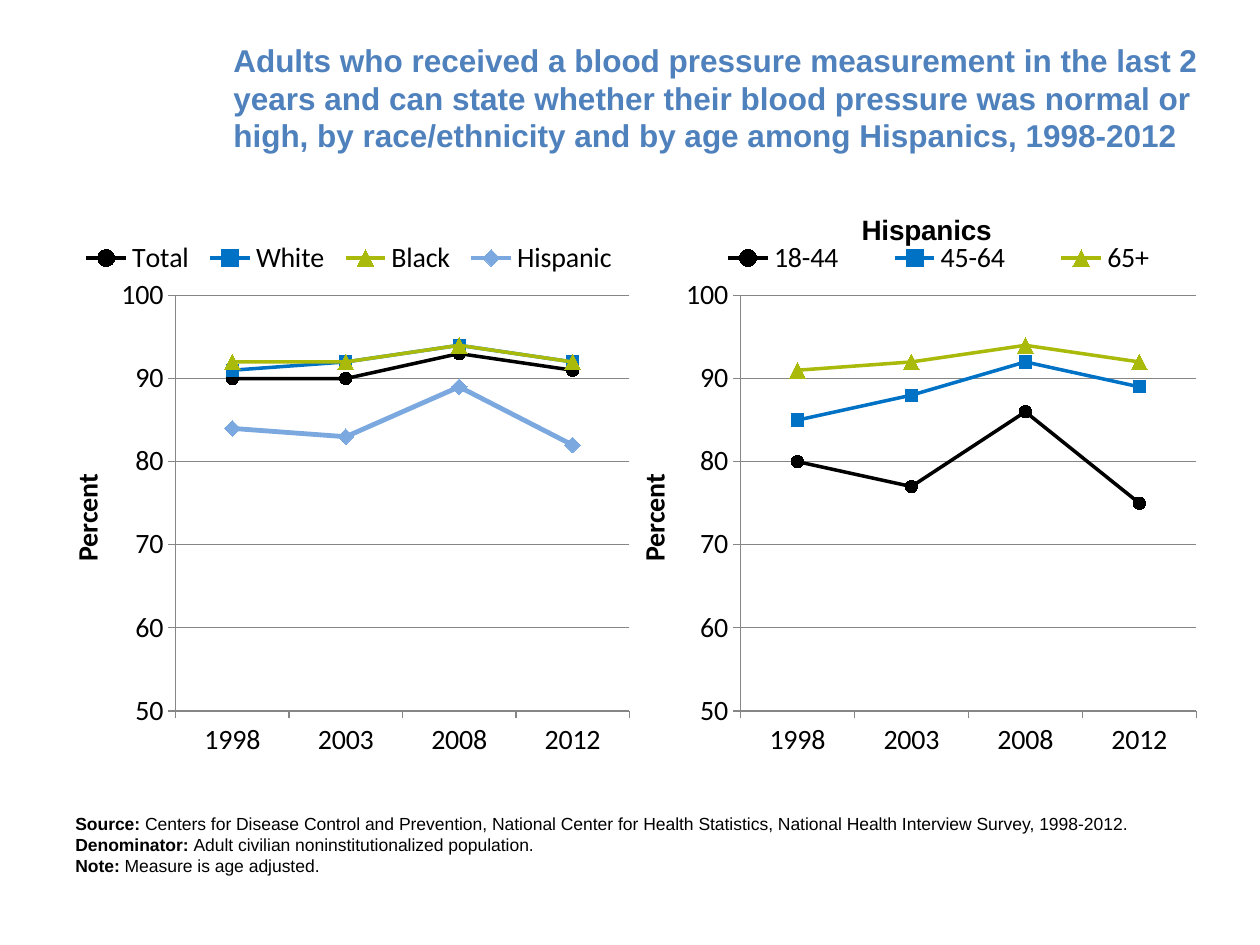
"""Build the blood pressure measurement slide with two line charts."""
from dataclasses import dataclass

import pptx
import pptx.chart.data
import pptx.dml.color
import pptx.enum.chart
import pptx.enum.text
import pptx.oxml
import pptx.oxml.ns
from pptx.util import Cm, Pt

RGBColor = pptx.dml.color.RGBColor
Marker = pptx.enum.chart.XL_MARKER_STYLE
BLACK = RGBColor(0x00, 0x00, 0x00)
BLUE = RGBColor(0x00, 0x72, 0xC6)
GREEN = RGBColor(0xAA, 0xBA, 0x0A)
LIGHT_BLUE = RGBColor(0x7B, 0xA8, 0xDF)
TITLE_BLUE = RGBColor(0x4F, 0x81, 0xBD)
GRAY = RGBColor(0x86, 0x86, 0x86)
YEARS = ("1998", "2003", "2008", "2012")
CHART_SIZE = 11.43


@dataclass
class Style:
    color: RGBColor
    marker: Marker
    size: int
    width: float = 2


@dataclass
class Panel:
    left: float
    series: dict[str, tuple[int, ...]]
    plot: tuple[float, ...]
    legend: tuple[float, ...]
    title: str = ""


STYLES = (
    Style(BLACK, Marker.CIRCLE, 7),
    Style(BLUE, Marker.SQUARE, 7),
    Style(GREEN, Marker.TRIANGLE, 9),
    Style(LIGHT_BLUE, Marker.DIAMOND, 9, 2.75),
)
PANELS = (
    Panel(
        12.7,
        {"18-44": (80, 77, 86, 75), "45-64": (85, 88, 92, 89), "65+": (91, 92, 94, 92)},
        (0.195, 0.166, 0.805, 0.733),
        (0.09, 0.06, 0.91, 0.08),
        "Hispanics",
    ),
    Panel(
        1.27,
        {
            "Total": (90, 90, 93, 91),
            "White": (91, 92, 94, 92),
            "Black": (92, 92, 94, 92),
            "Hispanic": (84, 83, 89, 82),
        },
        (0.199, 0.166, 0.801, 0.733),
        (0.02, 0.06, 0.97, 0.08),
    ),
)
NOTES = (
    ("Source:", " Centers for Disease Control and Prevention, National Center for Health "
     "Statistics, National Health Interview Survey, 1998-2012."),
    ("Denominator: ", "Adult civilian noninstitutionalized population."),
    ("Note: ", "Measure is age adjusted."),
)


def set_font(font, size: float, name: str, color: RGBColor = BLACK, bold: bool | None = None) -> None:
    font.size, font.name, font.bold = Pt(size), name, bold
    font.color.rgb = color


def set_layout(parent, index: int, box: tuple[float, ...], inner: bool = False) -> None:
    for old in parent.findall(pptx.oxml.ns.qn("c:layout")):
        parent.remove(old)
    target = '<c:layoutTarget val="inner"/>' if inner else ""
    modes = '<c:xMode val="edge"/><c:yMode val="edge"/>'
    values = "".join(f'<c:{tag} val="{value}"/>' for tag, value in zip("xywh", box))
    parent.insert(index, pptx.oxml.parse_xml(
        f'<c:layout {pptx.oxml.ns.nsdecls("c")}><c:manualLayout>'
        f"{target}{modes}{values}</c:manualLayout></c:layout>"))


def format_axes(chart) -> None:
    for axis in (chart.category_axis, chart.value_axis):
        set_font(axis.tick_labels.font, 16, "Calibri")
        axis.major_tick_mark = pptx.enum.chart.XL_TICK_MARK.OUTSIDE
        axis.format.line.color.rgb = GRAY
    axis = chart.value_axis
    axis.minimum_scale, axis.maximum_scale, axis.major_unit = 50, 100, 10
    axis.tick_labels.number_format = "0"
    axis.tick_labels.number_format_is_linked = False
    axis.has_major_gridlines = True
    axis.major_gridlines.format.line.color.rgb = GRAY
    tf = axis.axis_title.text_frame
    tf.text = "Percent"
    set_font(tf.paragraphs[0].font, 16, "Calibri", bold=True)


def add_panel(s, panel: Panel) -> None:
    data = pptx.chart.data.CategoryChartData(number_format="0")
    data.categories = YEARS
    for name, values in panel.series.items():
        data.add_series(name, values)
    chart = s.shapes.add_chart(
        pptx.enum.chart.XL_CHART_TYPE.LINE_MARKERS, Cm(panel.left), Cm(4.06),
        Cm(CHART_SIZE), Cm(CHART_SIZE), data).chart
    set_font(chart.font, 10, "Arial")
    format_axes(chart)
    chart.plots[0].vary_by_categories = False
    for series, style in zip(chart.plots[0].series, STYLES):
        series.smooth = False
        series.format.line.color.rgb = style.color
        series.format.line.width = Pt(style.width)
        series.marker.style, series.marker.size = style.marker, style.size
        series.marker.format.fill.solid()
        series.marker.format.fill.fore_color.rgb = style.color
        series.marker.format.line.color.rgb = style.color
    chart.has_legend = True
    chart.legend.position = pptx.enum.chart.XL_LEGEND_POSITION.TOP
    chart.legend.include_in_layout = False
    set_font(chart.legend.font, 16, "Calibri")
    set_layout(chart.legend._element, 1, panel.legend)
    set_layout(chart._chartSpace.chart.plotArea, 0, panel.plot, inner=True)
    chart.has_title = bool(panel.title)
    if panel.title:
        tf = chart.chart_title.text_frame
        tf.text = panel.title
        set_font(tf.paragraphs[0].font, 16, "Arial", bold=True)
        set_layout(chart.chart_title._element, 1, (0.4, 0.01))


def add_title(s) -> None:
    sp = s.shapes.title
    sp.left, sp.top, sp.width, sp.height = Cm(4.45), Cm(0.76), Cm(20.95), Cm(2.41)
    tf = sp.text_frame
    tf.text = ("Adults who received a blood pressure measurement in the last 2 years and can "
               "state whether their blood pressure was normal or high, by race/ethnicity and "
               "by age among Hispanics, 1998-2012")
    tf.vertical_anchor = pptx.enum.text.MSO_ANCHOR.MIDDLE
    p = tf.paragraphs[0]
    p.alignment = pptx.enum.text.PP_ALIGN.LEFT
    set_font(p.font, 18, "Arial", TITLE_BLUE, True)


def add_notes(s) -> None:
    tf = s.shapes.add_textbox(Cm(1.27), Cm(16.26), Cm(22.86), Cm(1.55)).text_frame
    tf.word_wrap = True
    tf.auto_size = pptx.enum.text.MSO_AUTO_SIZE.SHAPE_TO_FIT_TEXT
    for i, (label, text) in enumerate(NOTES):
        p = tf.add_paragraph() if i else tf.paragraphs[0]
        set_font(p.font, 10, "Arial")
        for part, bold in ((label, True), (text, False)):
            r = p.add_run()
            r.text, r.font.bold = part, bold


def main() -> None:
    prs = pptx.Presentation()
    prs.slide_width, prs.slide_height = Cm(25.4), Cm(19.05)
    s = prs.slides.add_slide(prs.slide_layouts[5])
    add_title(s)
    for panel in PANELS:
        add_panel(s, panel)
    add_notes(s)
    prs.save("out.pptx")


if __name__ == "__main__":
    main()
